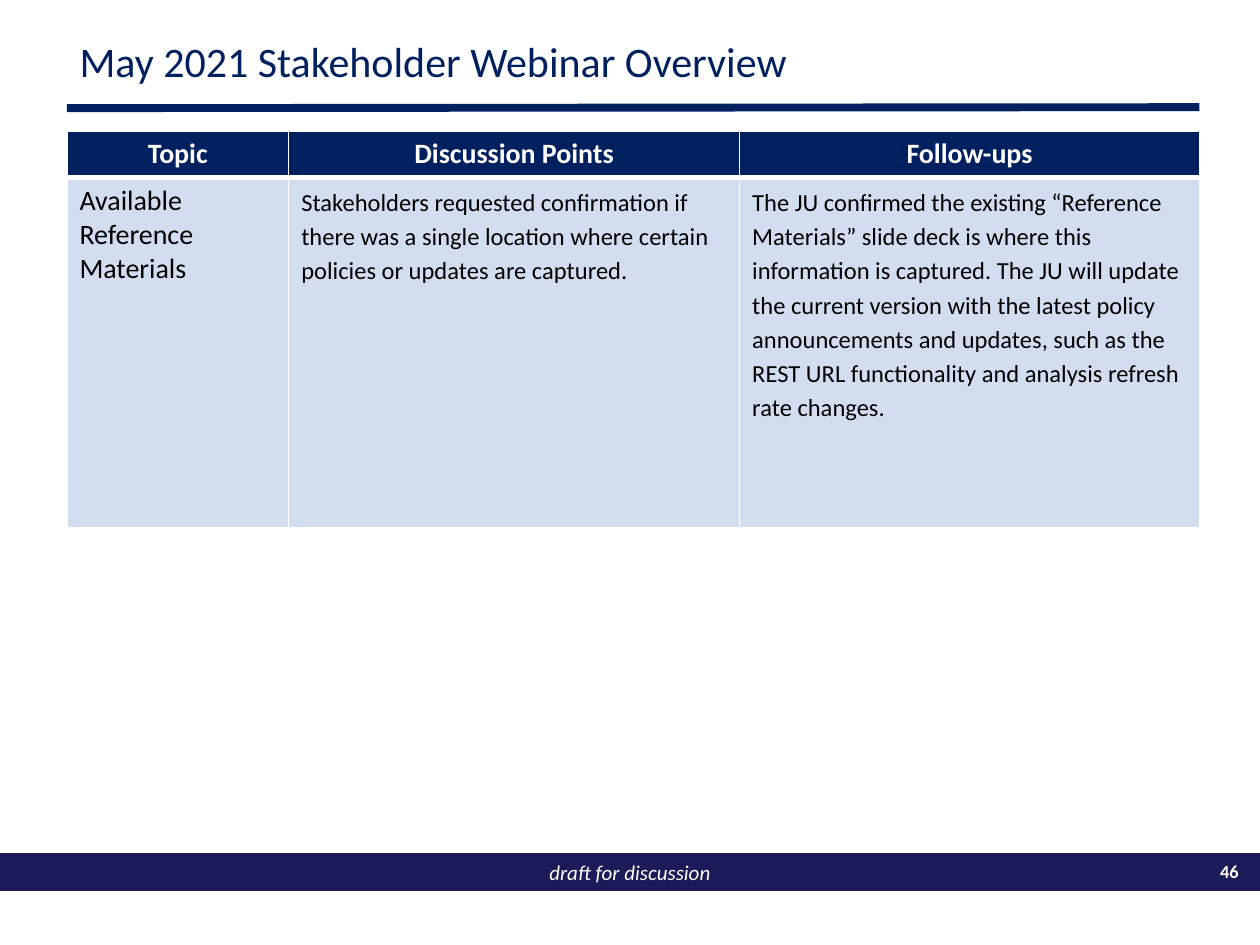
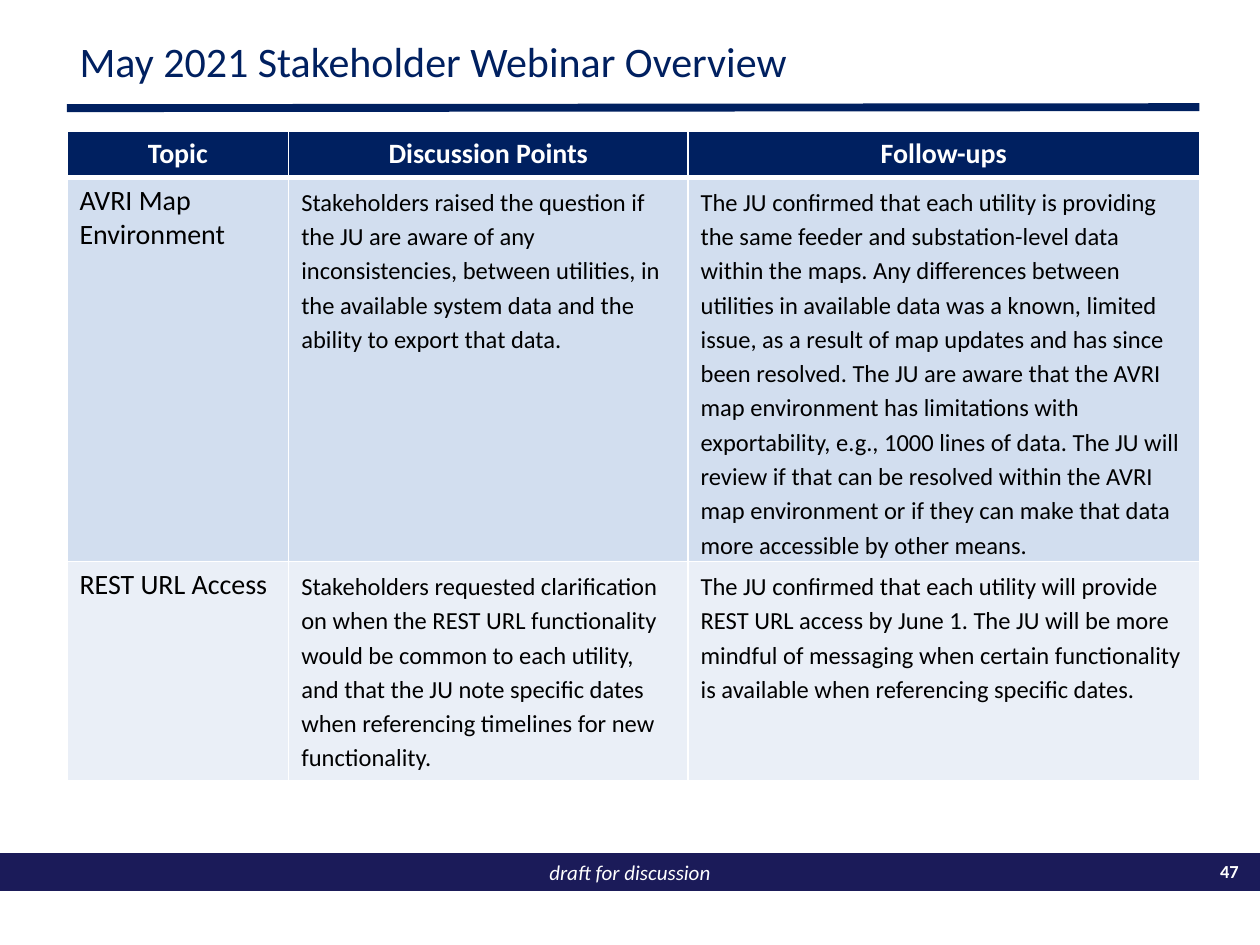
from dataclasses import dataclass

import pptx
import pptx.dml.color
import pptx.enum.shapes
import pptx.enum.text
import pptx.oxml.ns
import pptx.presentation
import pptx.shapes.base
import pptx.slide
import pptx.table
import pptx.text.text
import pptx.util
from lxml import etree

Cm = pptx.util.Cm
Pt = pptx.util.Pt
RGBColor = pptx.dml.color.RGBColor
Align = pptx.enum.text.PP_ALIGN
Anchor = pptx.enum.text.MSO_ANCHOR

NAVY = RGBColor(0x00, 0x20, 0x60)
FOOTER_NAVY = RGBColor(0x1B, 0x1B, 0x59)
WHITE = RGBColor(0xFF, 0xFF, 0xFF)
BLACK = RGBColor(0x00, 0x00, 0x00)
ROW_FILLS = (RGBColor(0xD2, 0xDE, 0xEF), RGBColor(0xEA, 0xEF, 0xF7))

FONT = "Calibri"
SLIDE_WIDTH = Cm(25.4)
SLIDE_HEIGHT = Cm(19.05)
LEFT = Cm(1.35)
CONTENT_WIDTH = Cm(22.83)
TITLE = "May 2021 Stakeholder Webinar Overview"
HEADINGS = ("Topic", "Discussion Points", "Follow-ups")
TOPIC_WIDTH = Cm(4.47)
HEADER_HEIGHT = Cm(0.86)


@dataclass(frozen=True)
class TextStyle:
    size: float
    color: RGBColor
    bold: bool = False
    italic: bool = False
    align: Align = Align.LEFT
    line_spacing: float = 1.0


TITLE_STYLE = TextStyle(24, NAVY, line_spacing=0.9)
FOOTER_STYLE = TextStyle(12, WHITE, italic=True, align=Align.CENTER)
NUMBER_STYLE = TextStyle(10.5, WHITE, bold=True, align=Align.RIGHT)
HEADING_STYLE = TextStyle(16, WHITE, bold=True, align=Align.CENTER)
TOPIC_STYLE = TextStyle(16, BLACK)
DETAIL_STYLE = TextStyle(14, BLACK, line_spacing=1.15)


@dataclass(frozen=True)
class TopicRow:
    topic: str
    discussion: str
    follow_up: str
    height: pptx.util.Length


@dataclass(frozen=True)
class OverviewPage:
    number: int
    discussion_width: pptx.util.Length
    rows: tuple[TopicRow, ...]


PAGES = (
    OverviewPage(46, Cm(9.09), (
        TopicRow(
            "Available Reference Materials",
            "Stakeholders requested confirmation if there was a single location "
            "where certain policies or updates are captured.",
            "The JU confirmed the existing “Reference Materials” slide deck is where "
            "this information is captured. The JU will update the current version "
            "with the latest policy announcements and updates, such as the REST URL "
            "functionality and analysis refresh rate changes.",
            Cm(7.06),
        ),
    )),
    OverviewPage(47, Cm(8.05), (
        TopicRow(
            "AVRI Map Environment",
            "Stakeholders raised the question if the JU are aware of any "
            "inconsistencies, between utilities, in the available system data and "
            "the ability to export that data.",
            "The JU confirmed that each utility is providing the same feeder and "
            "substation-level data within the maps. Any differences between "
            "utilities in available data was a known, limited issue, as a result of "
            "map updates and has since been resolved. The JU are aware that the AVRI "
            "map environment has limitations with exportability, e.g., 1000 lines of "
            "data. The JU will review if that can be resolved within the AVRI map "
            "environment or if they can make that data more accessible by other "
            "means.",
            Cm(7.06),
        ),
        TopicRow(
            "REST URL Access",
            "Stakeholders requested clarification on when the REST URL functionality "
            "would be common to each utility, and that the JU note specific dates "
            "when referencing timelines for new functionality.",
            "The JU confirmed that each utility will provide REST URL access by "
            "June 1. The JU will be more mindful of messaging when certain "
            "functionality is available when referencing specific dates.",
            Cm(4.42),
        ),
    )),
)


def write_text(frame: pptx.text.text.TextFrame, text: str, style: TextStyle) -> None:
    frame.word_wrap = True
    paragraph = frame.paragraphs[0]
    paragraph.alignment = style.align
    paragraph.line_spacing = style.line_spacing
    run = paragraph.add_run()
    run.text = text
    run.font.name = FONT
    run.font.size = Pt(style.size)
    run.font.bold = style.bold
    run.font.italic = style.italic
    run.font.color.rgb = style.color


def add_title(slide: pptx.slide.Slide) -> None:
    title = slide.shapes.title
    title.left, title.top = LEFT, Cm(0.71)
    title.width, title.height = CONTENT_WIDTH, Cm(1.14)
    title.text_frame.auto_size = pptx.enum.text.MSO_AUTO_SIZE.NONE
    title.text_frame.vertical_anchor = Anchor.MIDDLE
    write_text(title.text_frame, TITLE, TITLE_STYLE)


def add_title_rule(slide: pptx.slide.Slide) -> None:
    rule = slide.shapes.add_connector(
        pptx.enum.shapes.MSO_CONNECTOR.STRAIGHT,
        LEFT, Cm(2.18), LEFT + CONTENT_WIDTH, Cm(2.16),
    )
    rule.line.color.rgb = NAVY
    rule.line.width = Pt(4.5)
    etree.SubElement(rule._element.spPr, pptx.oxml.ns.qn("a:effectLst"))


def add_footer(slide: pptx.slide.Slide, number: int) -> None:
    band = slide.shapes.add_shape(
        pptx.enum.shapes.MSO_SHAPE.RECTANGLE, 0, Cm(17.2), SLIDE_WIDTH, Cm(0.76)
    )
    band.shadow.inherit = False
    band.fill.solid()
    band.fill.fore_color.rgb = FOOTER_NAVY
    band.line.fill.background()
    band.text_frame.vertical_anchor = Anchor.MIDDLE
    write_text(band.text_frame, "draft for discussion", FOOTER_STYLE)
    number_box = slide.shapes.add_textbox(Cm(24.18), Cm(17.22), Cm(1.04), Cm(0.73))
    write_text(number_box.text_frame, str(number), NUMBER_STYLE)


def set_borders(cell: pptx.table._Cell, bottom: float) -> None:
    properties = cell._tc.get_or_add_tcPr()
    for side, width in {"L": 1, "R": 1, "T": 1, "B": bottom}.items():
        line = etree.SubElement(
            properties, pptx.oxml.ns.qn(f"a:ln{side}"), w=str(Pt(width))
        )
        fill = etree.SubElement(line, pptx.oxml.ns.qn("a:solidFill"))
        etree.SubElement(fill, pptx.oxml.ns.qn("a:srgbClr"), val=str(WHITE))


def fill_cell(
    cell: pptx.table._Cell,
    text: str,
    style: TextStyle,
    fill: RGBColor,
    anchor: Anchor = Anchor.TOP,
    bottom_border: float = 1,
) -> None:
    set_borders(cell, bottom_border)
    cell.fill.solid()
    cell.fill.fore_color.rgb = fill
    cell.vertical_anchor = anchor
    write_text(cell.text_frame, text, style)


def add_overview_table(slide: pptx.slide.Slide, page: OverviewPage) -> None:
    heights = [HEADER_HEIGHT, *(row.height for row in page.rows)]
    follow_up_width = CONTENT_WIDTH - TOPIC_WIDTH - page.discussion_width
    widths = (TOPIC_WIDTH, page.discussion_width, follow_up_width)
    table = slide.shapes.add_table(
        len(heights), len(widths), LEFT, Cm(2.64), CONTENT_WIDTH, sum(heights)
    ).table
    table.horz_banding = False
    for column, width in zip(table.columns, widths):
        column.width = width
    for table_row, height in zip(table.rows, heights):
        table_row.height = height
    for column_index, heading in enumerate(HEADINGS):
        fill_cell(
            table.cell(0, column_index), heading, HEADING_STYLE, NAVY, Anchor.MIDDLE, 3
        )
    for row_index, row in enumerate(page.rows):
        fill = ROW_FILLS[row_index % len(ROW_FILLS)]
        texts = (row.topic, row.discussion, row.follow_up)
        styles = (TOPIC_STYLE, DETAIL_STYLE, DETAIL_STYLE)
        for column_index, (text, style) in enumerate(zip(texts, styles)):
            fill_cell(table.cell(row_index + 1, column_index), text, style, fill)


def add_overview_slide(
    presentation: pptx.presentation.Presentation, page: OverviewPage
) -> None:
    slide = presentation.slides.add_slide(
        presentation.slide_layouts.get_by_name("Title Only")
    )
    add_footer(slide, page.number)
    add_title_rule(slide)
    add_title(slide)
    add_overview_table(slide, page)


def main() -> None:
    presentation = pptx.Presentation()
    presentation.slide_width = SLIDE_WIDTH
    presentation.slide_height = SLIDE_HEIGHT
    for page in PAGES:
        add_overview_slide(presentation, page)
    presentation.save("out.pptx")


if __name__ == "__main__":
    main()
